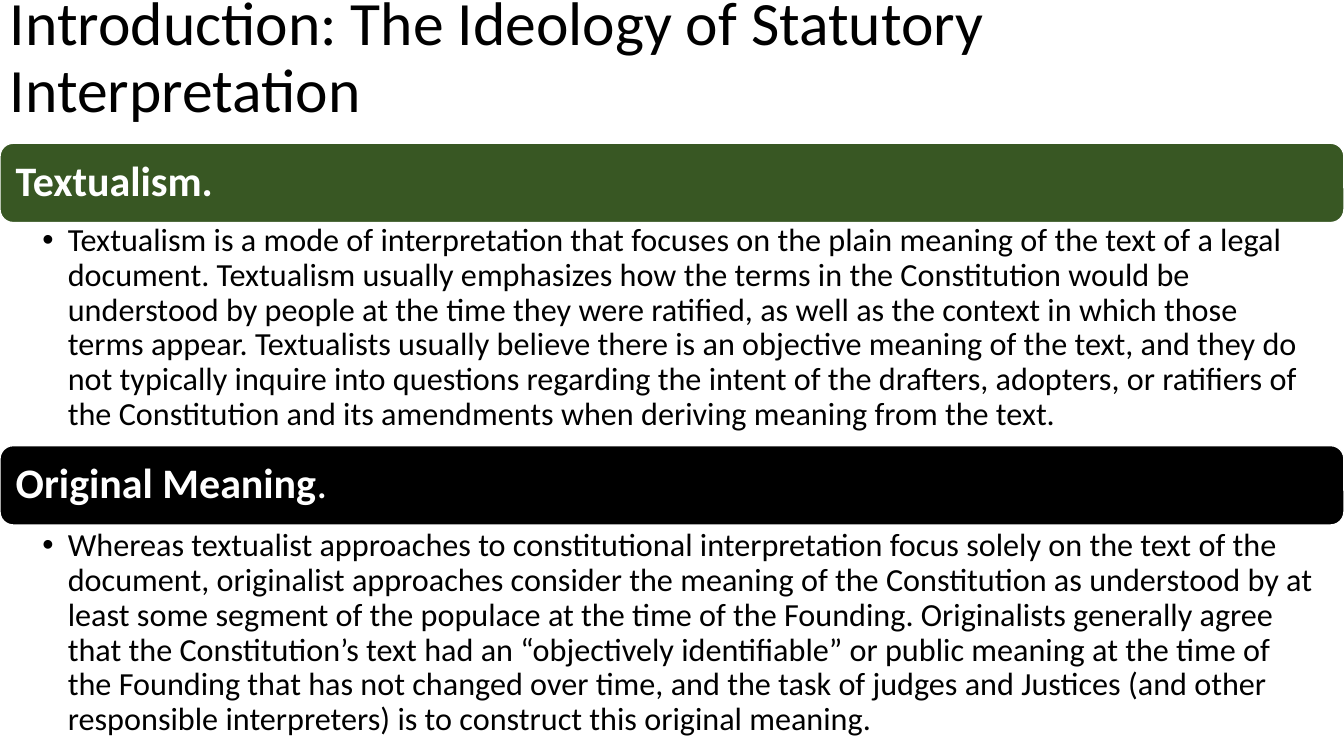
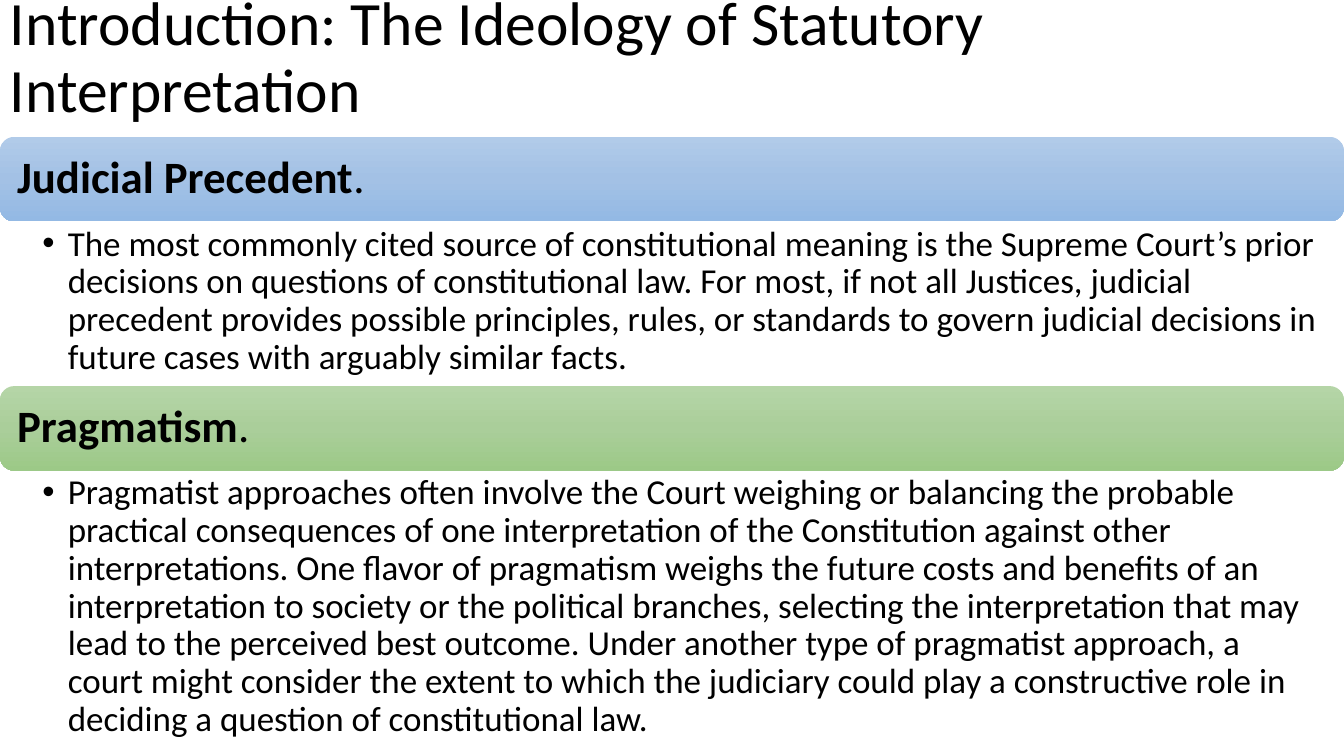
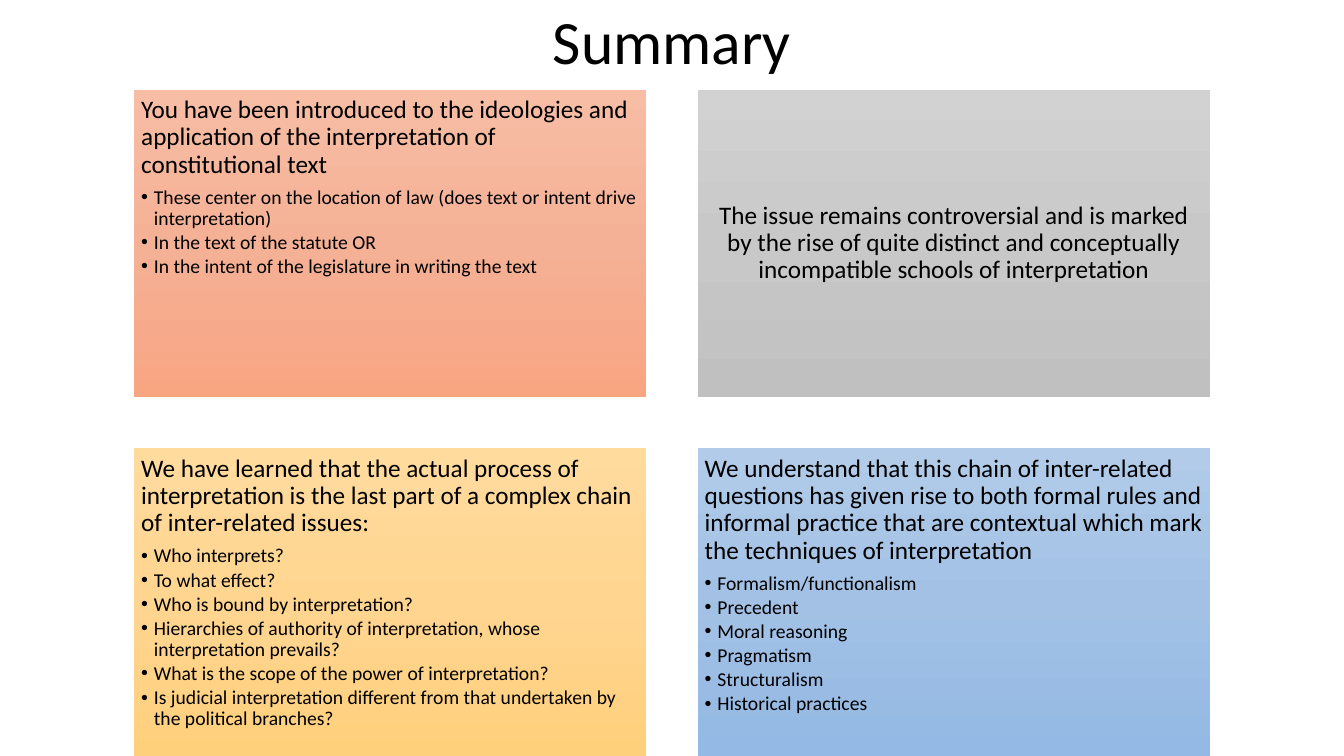
"""Build three slides on the ideologies of statutory interpretation."""
from copy import deepcopy
from dataclasses import dataclass

from lxml.etree import SubElement
from pptx import Presentation
from pptx.dml.color import RGBColor
from pptx.enum.shapes import MSO_SHAPE as Shape
from pptx.enum.text import MSO_ANCHOR as Anchor, MSO_AUTO_SIZE as AutoSize, PP_ALIGN as Align
from pptx.oxml.ns import qn
from pptx.util import Cm, Pt


@dataclass(frozen=True)
class Theme:
    font: str = "Calibri"
    black: str = "000000"
    white: str = "FFFFFF"
    green: str = "385723"
    blue_fade: tuple = ("B1CBE9", "A3C1E5", "93B9E4")
    green_fade: tuple = ("B5D5A7", "AACE9A", "9CC987")
    orange_fade: tuple = ("F7BDA5", "F5B196", "F8A582")
    gray_fade: tuple = ("D2D2D2", "C8C8C8", "C0C0C0")
    gold_fade: tuple = ("FFDB9E", "FFD590", "FFD07C")
    title_size: int = 44
    card_size: int = 18
    point_size: int = 14
    line_spacing: float = 0.9


THEME = Theme()
WIDTH, HEIGHT = 33.87, 19.05
TITLE_ONLY, TWO_CONTENT = 5, 3
SCHOOLS_TITLE = "Introduction: The Ideology of Statutory Interpretation"

SCHOOL_SLIDES = [
    {
        "banner_height": 2.0, "banner_inset": 0.3, "banner_size": 30,
        "body_size": 23, "body_right": 0.58, "text_color": THEME.white,
        "schools": [
            {"name": "Textualism.", "tail": "", "fill": THEME.green,
             "banner_top": 3.61, "body_top": 5.54, "body_height": 5.69,
             "body": "Textualism is a mode of interpretation that focuses on the plain meaning of the "
                     "text of a legal document. Textualism usually emphasizes how the terms in the "
                     "Constitution would be understood by people at the time they were ratified, as well "
                     "as the context in which those terms appear. Textualists usually believe there is an "
                     "objective meaning of the text, and they do not typically inquire into questions "
                     "regarding the intent of the drafters, adopters, or ratifiers of the Constitution "
                     "and its amendments when deriving meaning from the text."},
            {"name": "Original Meaning", "tail": ".", "fill": THEME.black,
             "banner_top": 11.23, "body_top": 13.23, "body_height": 5.69,
             "body": "Whereas textualist approaches to constitutional interpretation focus solely on the "
                     "text of the document, originalist approaches consider the meaning of the "
                     "Constitution as understood by at least some segment of the populace at the time of "
                     "the Founding. Originalists generally agree that the Constitution’s text had an "
                     "“objectively identifiable” or public meaning at the time of the Founding that has "
                     "not changed over time, and the task of judges and Justices (and other responsible "
                     "interpreters) is to construct this original meaning."},
        ],
    },
    {
        "banner_height": 2.13, "banner_inset": 0.33, "banner_size": 32,
        "body_size": 25, "body_right": 0.64, "text_color": THEME.black,
        "schools": [
            {"name": "Judicial Precedent", "tail": ".", "fill": THEME.blue_fade,
             "banner_top": 3.45, "body_top": 5.59, "body_height": 4.14,
             "body": "The most commonly cited source of constitutional meaning is the Supreme Court’s "
                     "prior decisions on questions of constitutional law. For most, if not all Justices, "
                     "judicial precedent provides possible principles, rules, or standards to govern "
                     "judicial decisions in future cases with arguably similar facts."},
            {"name": "Pragmatism", "tail": ".", "fill": THEME.green_fade,
             "banner_top": 9.73, "body_top": 11.86, "body_height": 7.19,
             "body": "Pragmatist approaches often involve the Court weighing or balancing the probable "
                     "practical consequences of one interpretation of the Constitution against other "
                     "interpretations. One flavor of pragmatism weighs the future costs and benefits of "
                     "an interpretation to society or the political branches, selecting the "
                     "interpretation that may lead to the perceived best outcome. Under another type of "
                     "pragmatist approach, a court might consider the extent to which the judiciary could "
                     "play a constructive role in deciding a question of constitutional law."},
        ],
    },
]

SUMMARY_CARDS = [
    ("You have been introduced to the ideologies and application of the interpretation of "
     "constitutional text", THEME.orange_fade,
     ["These center on the location of law (does text or intent drive interpretation)",
      "In the text of the statute OR",
      "In the intent of the legislature in writing the text"]),
    ("The issue remains controversial and is marked by the rise of quite distinct and conceptually "
     "incompatible schools of interpretation", THEME.gray_fade, []),
    ("We have learned that the actual process of interpretation is the last part of a complex chain "
     "of inter-related issues:", THEME.gold_fade,
     ["Who interprets?",
      "To what effect?",
      "Who is bound by interpretation?",
      "Hierarchies of authority of interpretation, whose interpretation prevails?",
      "What is the scope of the power of interpretation?",
      "Is judicial interpretation different from that undertaken by the political branches?"]),
    ("We understand that this chain of inter-related questions has given rise to both formal rules "
     "and informal practice that are contextual which mark the techniques of interpretation",
     THEME.blue_fade,
     ["Formalism/functionalism", "Precedent", "Moral reasoning", "Pragmatism", "Structuralism",
      "Historical practices"]),
]
CARD_LEFT, CARD_TOP = 3.38, 2.26
CARD_WIDTH, CARD_HEIGHT, CARD_GAP = 12.91, 7.75, 1.29


def write(frame, text, *, size, color=THEME.black, bold=False, tail="", align=Align.LEFT,
          indent=0, after=0):
    """Add one paragraph; a plain tail may follow and an indent makes it a bullet."""
    paragraph = frame.paragraphs[0]
    if paragraph.runs:
        paragraph = frame.add_paragraph()
    paragraph.alignment = align
    paragraph.line_spacing = THEME.line_spacing
    paragraph.space_before, paragraph.space_after = Pt(0), Pt(after)
    if indent:
        paragraph.level = 1
        properties = paragraph._p.get_or_add_pPr()
        properties.set("marL", str(Cm(indent)))
        properties.set("indent", str(-Cm(indent)))
        SubElement(properties, qn("a:buFont"), typeface="Arial")
        SubElement(properties, qn("a:buChar"), char="•")
    for part, is_bold in ((text, bold), (tail, False)):
        if part:
            run = paragraph.add_run()
            run.text = part
            run.font.name, run.font.size, run.font.bold = THEME.font, Pt(size), is_bold
            run.font.color.rgb = RGBColor.from_string(color)


def set_frame(shape, anchor, insets):
    """Prepare a text frame with insets given as left, top, right, bottom."""
    frame = shape.text_frame
    frame.word_wrap, frame.auto_size, frame.vertical_anchor = True, AutoSize.NONE, anchor
    frame.margin_left, frame.margin_top, frame.margin_right, frame.margin_bottom = map(Cm, insets)
    return frame


def place(shape, left, top, width, height):
    """Move and size a placeholder in centimetres."""
    shape.left, shape.top, shape.width, shape.height = map(Cm, (left, top, width, height))


def add_panel(slide, preset, box, fill):
    """Add a shape filled with one colour or a downward three-colour fade."""
    shape = slide.shapes.add_shape(preset, *map(Cm, box))
    shape.shadow.inherit = False
    if isinstance(fill, str):
        shape.fill.solid()
        shape.fill.fore_color.rgb = RGBColor.from_string(fill)
        shape.line.color.rgb = RGBColor.from_string(THEME.white)
        shape.line.width = Pt(1)
        return shape
    shape.line.fill.background()
    shape.fill.gradient()
    shape.fill.gradient_angle = 270
    stop_list = next(shape.element.iter(qn("a:gsLst")))
    stop_list.insert(1, deepcopy(stop_list[0]))
    for stop, color, position in zip(shape.fill.gradient_stops, fill, (0, 0.5, 1)):
        stop.color.rgb = RGBColor.from_string(color)
        stop.position = position
    return shape


def add_slide(presentation, layout, title, box, align):
    """Add a slide with its title."""
    slide = presentation.slides.add_slide(presentation.slide_layouts[layout])
    place(slide.shapes.title, *box)
    frame = set_frame(slide.shapes.title, Anchor.MIDDLE, (0.25, 0.13, 0.25, 0.13))
    write(frame, title, size=THEME.title_size, align=align)
    return slide


def add_school_slide(presentation, content):
    """Add a slide with a banner and a bulleted body for each school."""
    slide = add_slide(presentation, TWO_CONTENT, SCHOOLS_TITLE, (0, 0, WIDTH, 2.97), Align.LEFT)
    for index, school in enumerate(content["schools"], start=1):
        box = (0, school["banner_top"], WIDTH, content["banner_height"])
        banner = add_panel(slide, Shape.ROUNDED_RECTANGLE, box, school["fill"])
        frame = set_frame(banner, Anchor.MIDDLE, [content["banner_inset"]] * 4)
        write(frame, school["name"], size=content["banner_size"], color=content["text_color"],
              bold=True, tail=school["tail"])
        body = slide.placeholders[index]
        place(body, 0, school["body_top"], WIDTH, school["body_height"])
        frame = set_frame(body, Anchor.TOP, (1.07, 0.1, content["body_right"], 0.1))
        write(frame, school["body"], size=content["body_size"], indent=0.64)


def add_summary_slide(presentation):
    """Add the summary as a grid of cards, two to a row."""
    slide = add_slide(presentation, TITLE_ONLY, "Summary", (2.33, 0, 29.21, 2.26), Align.CENTER)
    for index, (heading, fill, points) in enumerate(SUMMARY_CARDS):
        row, column = divmod(index, 2)
        box = (CARD_LEFT + column * (CARD_WIDTH + CARD_GAP),
               CARD_TOP + row * (CARD_HEIGHT + CARD_GAP), CARD_WIDTH, CARD_HEIGHT)
        card = add_panel(slide, Shape.RECTANGLE, box, fill)
        frame = set_frame(card, Anchor.TOP if points else Anchor.MIDDLE, [0.18] * 4)
        write(frame, heading, size=THEME.card_size, after=6.3 if points else 0,
              align=Align.LEFT if points else Align.CENTER)
        for point in points:
            write(frame, point, size=THEME.point_size, indent=0.32, after=2.1)


def main():
    """Build and save the presentation."""
    presentation = Presentation()
    presentation.slide_width, presentation.slide_height = Cm(WIDTH), Cm(HEIGHT)
    for content in SCHOOL_SLIDES:
        add_school_slide(presentation, content)
    add_summary_slide(presentation)
    presentation.save("out.pptx")


if __name__ == "__main__":
    main()
